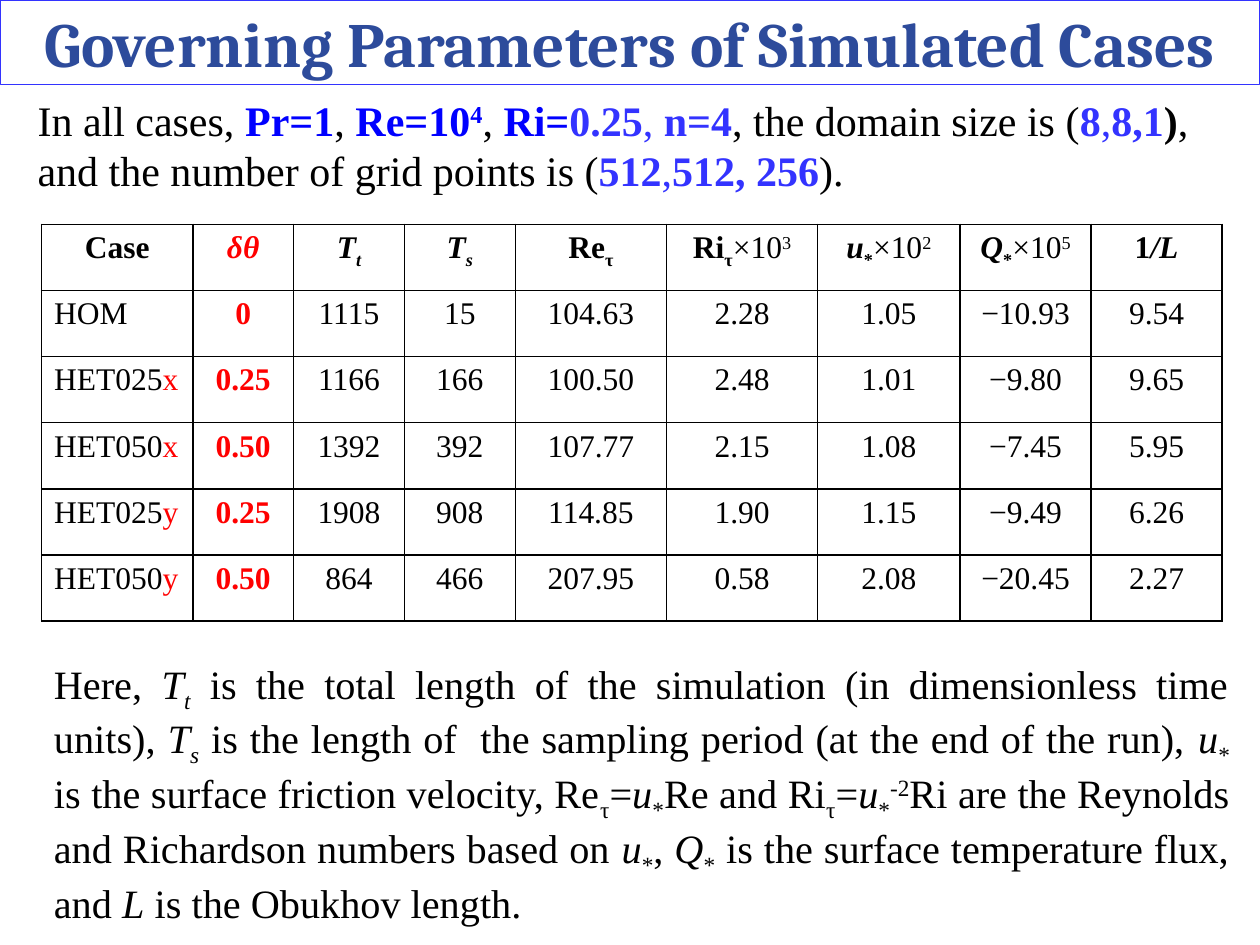
from lxml import etree
from pptx import Presentation
from pptx.dml.color import RGBColor
from pptx.enum import text
from pptx.oxml import ns
from pptx.util import Inches, Pt

COLORS = {"black": "000000", "white": "FFFFFF", "red": "FF0000",
          "blue": "0000FF", "violet": "3333FF", "navy": "2D4B9B"}
BODY_FONT = "Times New Roman"
CENTER = text.PP_ALIGN.CENTER


def write(para, spans, size, align=None, font=BODY_FONT):
    """Fill a paragraph with (words, marks, color) spans.

    Marks: b bold, i italic, ^ superscript, _ subscript.
    """
    para.alignment = align
    para.font.size, para.font.name = Pt(size), font
    for words, marks, color in spans:
        span = para.add_run()
        span.text = words
        span.font.size, span.font.name = Pt(size), font
        span.font.bold, span.font.italic = "b" in marks, "i" in marks
        span.font.color.rgb = RGBColor.from_string(COLORS[color])
        for mark, shift in (("^", "30000"), ("_", "-25000")):
            if mark in marks:
                span.font._element.set("baseline", shift)


def add_box(left, top, width, height):
    box = page.shapes.add_textbox(*map(Inches, (left, top, width, height)))
    box.text_frame.word_wrap = True
    return box


deck = Presentation()
deck.slide_width, deck.slide_height = Inches(10), Inches(7.5)
page = deck.slides.add_slide(deck.slide_layouts[6])

# Domain and grid settings
settings = [
    ("In all cases, ", "", "black"), ("Pr=1", "b", "blue"), (", ", "", "black"),
    ("Re=10", "b", "blue"), ("4", "b^", "blue"), (", ", "", "black"),
    ("Ri=", "b", "blue"), ("0.25", "b", "violet"), (", ", "", "violet"),
    ("n=4", "b", "violet"), (", the domain size is (", "", "black"),
    ("8", "b", "violet"), (",", "", "violet"), ("8,1", "b", "violet"),
    (")", "b", "black"), (", and the number of grid points is (", "", "black"),
    ("512", "b", "violet"), (",", "", "violet"), ("512, 256", "b", "violet"),
    (").", "", "black"),
]
box = add_box(0.2, 0.7, 9.45, 0.91)
write(box.text_frame.paragraphs[0], settings, 24)

# Title bar
title = add_box(0, 0, 10, 0.67)
title.line.color.rgb = RGBColor.from_string(COLORS["violet"])
title.line.width = Pt(0.5)
title.text_frame.vertical_anchor = text.MSO_ANCHOR.MIDDLE
para = title.text_frame.paragraphs[0]
write(para, [("Governing Parameters of Simulated Cases", "b", "navy")], 36, CENTER, "Cambria")
before = etree.Element(ns.qn("a:spcBef"))
etree.SubElement(before, ns.qn("a:spcPct"), val="50000")
para._p.get_or_add_pPr().insert(0, before)

# Explanation of symbols: spans of (words, marks), all black
symbols = [
    ("Here, ", ""), ("T", "i"), ("t", "i_"),
    (" is the total length of the simulation (in dimensionless time units), ", ""),
    ("T", "i"), ("s", "i_"),
    (" is the length of  the sampling period (at the end of the run), ", ""),
    ("u", "i"), ("*", "_"), (" is the surface friction velocity, Re", ""),
    ("τ", "_"), ("=", ""), ("u", "i"), ("*", "_"), ("Re and Ri", ""),
    ("τ", "_"), ("=", ""), ("u", "i"), ("*", "_"), ("-2", "^"),
    ("Ri are the Reynolds and Richardson numbers based on ", ""),
    ("u", "i"), ("*", "_"), (", ", ""), ("Q", "i"), ("*", "_"),
    (" is the surface temperature flux, and ", ""), ("L", "i"),
    (" is the Obukhov length.", ""),
]
box = add_box(0.33, 5.18, 9.53, 2.04)
write(box.text_frame.paragraphs[0], [(*span, "black") for span in symbols], 23,
      text.PP_ALIGN.JUSTIFY)

# Table of cases
headers = [
    [("Case", "b")], [("δθ", "bi")],
    [("T", "bi"), ("t", "bi_")], [("T", "bi"), ("s", "bi_")],
    [("Re", "b"), ("τ", "b_")],
    [("Ri", "b"), ("τ", "b_"), ("×10", ""), ("3", "^")],
    [("u", "bi"), ("*", "b_"), ("×10", ""), ("2", "^")],
    [("Q", "bi"), ("*", "b_"), ("×10", ""), ("5", "^")],
    [("1", "b"), ("/L", "bi")],
]
cases = [
    ("HOM", "", "0", "1115", "15", "104.63", "2.28", "1.05", "−10.93", "9.54"),
    ("HET025", "x", "0.25", "1166", "166", "100.50", "2.48", "1.01", "−9.80", "9.65"),
    ("HET050", "x", "0.50", "1392", "392", "107.77", "2.15", "1.08", "−7.45", "5.95"),
    ("HET025", "y", "0.25", "1908", "908", "114.85", "1.90", "1.15", "−9.49", "6.26"),
    ("HET050", "y", "0.50", "864", "466", "207.95", "0.58", "2.08", "−20.45", "2.27"),
]
rows = [[[(*span, "red" if col == 1 else "black") for span in spans]
         for col, spans in enumerate(headers)]]
for name, axis, contrast, *values in cases:
    label = [(name, "", "black")] + ([(axis, "", "red")] if axis else [])
    rows.append([label, [(contrast, "b", "red")]] + [[(value, "", "black")] for value in values])

widths = [1.2, 0.8, 0.88, 0.88, 1.2, 1.2, 1.13, 1.04, 1.04]
row_height = 0.525
table = page.shapes.add_table(len(rows), len(widths), Inches(0.33), Inches(1.78),
                              Inches(sum(widths)), Inches(row_height * len(rows))).table
for column, width in zip(table.columns, widths):
    column.width = Inches(width)
for r, row in enumerate(rows):
    table.rows[r].height = Inches(row_height)
    for c, spans in enumerate(row):
        cell = table.cell(r, c)
        write(cell.text_frame.paragraphs[0], spans, 18, None if r and c == 0 else CENTER)
        props = cell._tc.get_or_add_tcPr()
        for side in ("lnL", "lnR", "lnT", "lnB"):
            edge = etree.SubElement(props, ns.qn(f"a:{side}"), w=str(Pt(1)))
            fill = etree.SubElement(edge, ns.qn("a:solidFill"))
            etree.SubElement(fill, ns.qn("a:srgbClr"), val=COLORS["black"])
        cell.fill.solid()
        cell.fill.fore_color.rgb = RGBColor.from_string(COLORS["white"])

deck.save("out.pptx")
